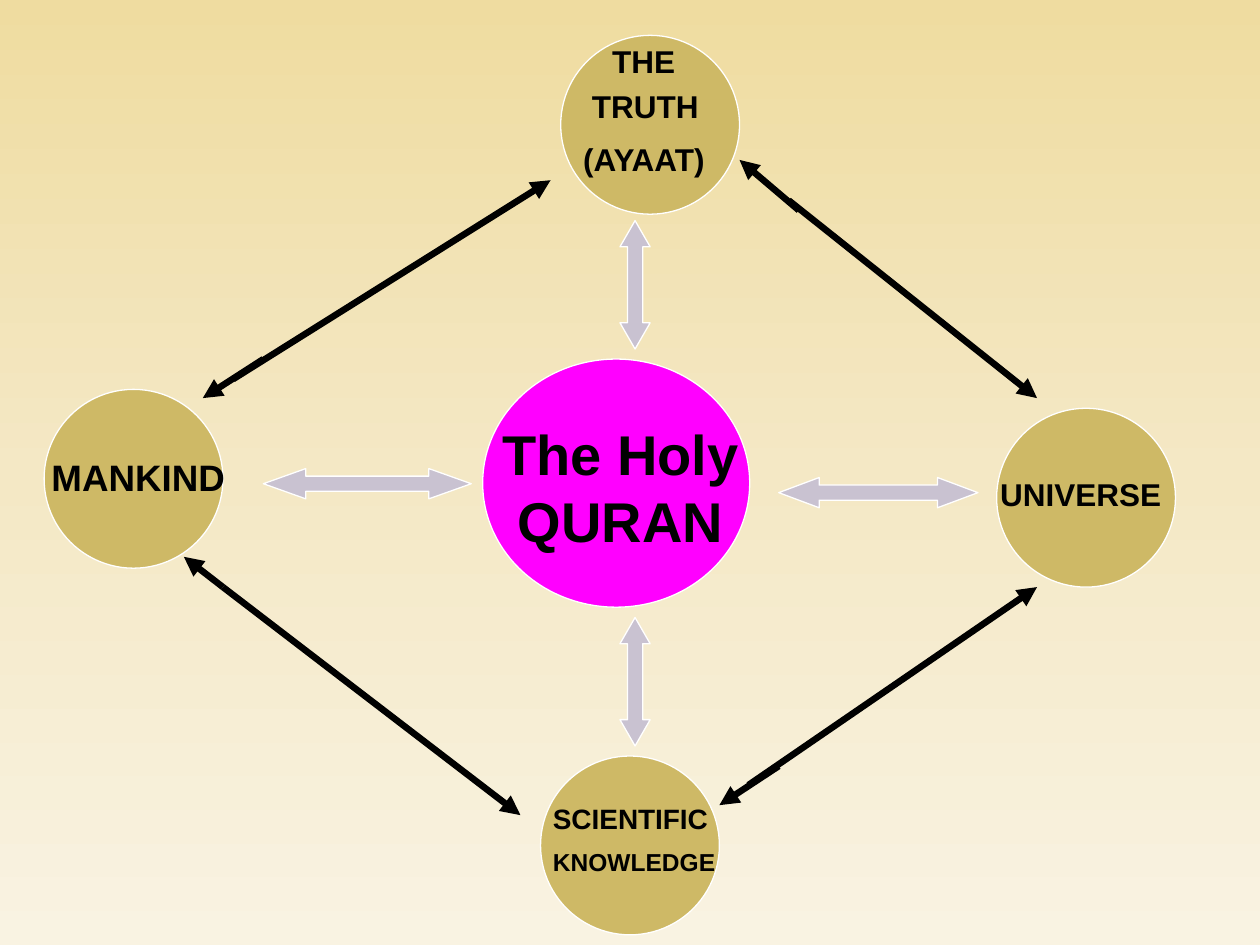
from copy import deepcopy

from lxml.etree import SubElement
from pptx import Presentation
from pptx.dml.color import RGBColor
from pptx.enum.shapes import MSO_CONNECTOR as Connector, MSO_SHAPE as Shape
from pptx.enum.text import MSO_AUTO_SIZE as AutoSize, PP_ALIGN as Align
from pptx.oxml.ns import qn
from pptx.util import Pt

BLACK = RGBColor(0, 0, 0)
WHITE = RGBColor(0xFF, 0xFF, 0xFF)
GOLD = RGBColor(0xCE, 0xB9, 0x66)
MAGENTA = RGBColor(0xFF, 0x00, 0xFF)
LILAC = RGBColor(0xC9, 0xC2, 0xD1)
SKY = [(0, RGBColor(0xEF, 0xDC, 0xA0)),
       (0.5, RGBColor(0xF4, 0xE8, 0xC5)),
       (1, RGBColor(0xF9, 0xF3, 0xE2))]

NODE = 102.2
ARROW_HEIGHT = 17.3
HEAD_RATIO = {73.4: 0.868, 113.8: 1.335, 118.8: 1.401}

ARROWS = [
    (326.2, 154.1, 73.4, 90),
    (326.2, 380.9, 73.4, 90),
    (445, 272.9, 113.8, 0),
    (150.5, 267.8, 118.8, 0),
]

CIRCLES = [
    ((320.4, 20.2, NODE, NODE), GOLD, [
        ((5.8, 25.9, 96.5, 61.2), [("TRUTH", 18, 5), ("(AYAAT)", 18, 0)], Align.LEFT),
        ((22.3, 0, 56.9, 28.8), [("THE", 18, 0)], Align.LEFT),
    ]),
    ((275.8, 205.2, 152.6, 141.8), MAGENTA, [
        ((0, 31, 157.7, 84.2), [("The Holy QURAN", 32, 0)], Align.CENTER),
    ]),
    ((308.9, 432, NODE, NODE), GOLD, [
        ((0, 22.3, 110.9, 51.8), [("SCIENTIFIC", 16, 0), ("KNOWLEDGE", 14, 0)], Align.LEFT),
    ]),
    ((25.2, 222.5, NODE, NODE), GOLD, [
        ((-2.9, 33.8, 138.2, 32.4), [("MANKIND", 21, 0)], Align.LEFT),
    ]),
    ((569.5, 233.3, NODE, NODE), GOLD, [
        ((-5, 34.6, 113, 28.8), [("UNIVERSE", 18, 0)], Align.LEFT),
    ]),
]

LINKS = [
    ((133.2, 216.7), (314.6, 103)),
    ((150.5, 205.2), (115.9, 227.5)),
    ((127.4, 335.5), (297.4, 465.8)),
    ((450.7, 114.5), (592.6, 227.5)),
    ((427.7, 448.6), (592.6, 335.5)),
    ((445, 437.8), (411.1, 460.1)),
    ((456.5, 120.2), (422.6, 91.4)),
    ((127.4, 335.5), (105.1, 318.2)),
]


def points(values):
    return [Pt(value) for value in values]


def paint_background(page):
    fill = page.background.fill
    fill.gradient()
    fill.gradient_angle = 270
    stop_list = next(page.element.iter(qn("a:gsLst")))
    stop_list.append(deepcopy(stop_list[0]))
    for stop, (position, color) in zip(fill.gradient_stops, SKY):
        stop.position = position
        stop.color.rgb = color


def add_filled(page, kind, box, color):
    shape = page.shapes.add_shape(kind, *points(box))
    shape.shadow.inherit = False
    shape.fill.solid()
    shape.fill.fore_color.rgb = color
    shape.line.color.rgb = WHITE
    shape.line.width = Pt(0.75)
    return shape


def add_arrow(page, left, top, length, rotation):
    arrow = add_filled(page, Shape.LEFT_RIGHT_ARROW,
                       (left, top, length, ARROW_HEIGHT), LILAC)
    arrow.adjustments[1] = HEAD_RATIO[length]
    arrow.rotation = rotation


def add_label(page, box, rows, align):
    frame = page.shapes.add_textbox(*points(box)).text_frame
    frame.word_wrap = True
    frame.auto_size = AutoSize.SHAPE_TO_FIT_TEXT
    for index, (text, size, indent) in enumerate(rows):
        para = frame.add_paragraph() if index else frame.paragraphs[0]
        para.alignment = align
        if index:
            para.space_before = Pt(size / 2)
        span = para.add_run()
        span.text = text
        font_format = {"name": "Arial", "size": Pt(size), "bold": True}
        for name, value in font_format.items():
            setattr(span.font, name, value)
        span.font.color.rgb = BLACK
        if indent:
            para._p.get_or_add_pPr().set("indent", str(Pt(indent)))


def add_circle_labels(page, box, labels):
    left, top = box[:2]
    for (dx, dy, width, height), rows, align in labels:
        add_label(page, (left + dx, top + dy, width, height), rows, align)


def add_link(page, start, end):
    link = page.shapes.add_connector(Connector.STRAIGHT, *points(start + end))
    link.line.color.rgb = BLACK
    link.line.width = Pt(3.75)
    properties = link.element.spPr
    SubElement(properties.find(qn("a:ln")), qn("a:tailEnd"), type="triangle")
    SubElement(properties, qn("a:effectLst"))


def main():
    deck = Presentation()
    deck.slide_width, deck.slide_height = Pt(720), Pt(540)
    page = deck.slides.add_slide(deck.slide_layouts[6])
    paint_background(page)
    for arrow in ARROWS:
        add_arrow(page, *arrow)
    for box, color, _ in CIRCLES:
        add_filled(page, Shape.OVAL, box, color)
    for box, _, labels in CIRCLES:
        add_circle_labels(page, box, labels)
    for start, end in LINKS:
        add_link(page, start, end)
    deck.save("out.pptx")


if __name__ == "__main__":
    main()
